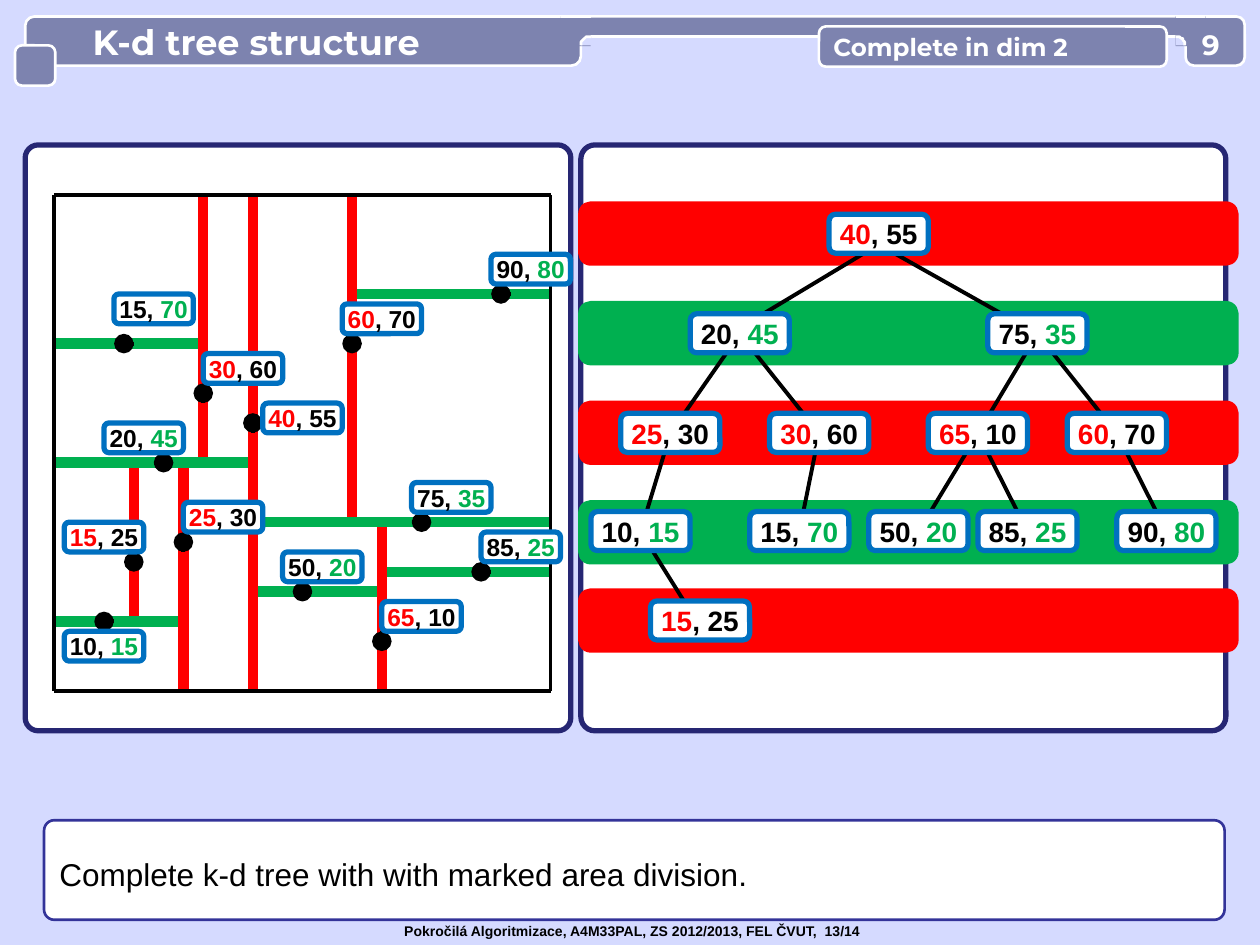
from dataclasses import dataclass
from math import cos, pi, sin
from typing import NamedTuple

from lxml.etree import SubElement
from pptx import Presentation
from pptx.dml.color import RGBColor
from pptx.enum.shapes import MSO_CONNECTOR, MSO_SHAPE
from pptx.enum.text import MSO_ANCHOR, PP_ALIGN
from pptx.oxml.ns import qn
from pptx.util import Pt

WHITE, BLACK, RED, GREEN = "FFFFFF", "000000", "FF0000", "00B050"
BACKGROUND, BAR, NAVY, LABEL_BLUE = "D5DAFF", "7D83AF", "262673", "0070C0"
GRID = 5.67
PLANE_LEFT, PLANE_TOP, PLANE_SIZE = 31.1, 111.3, 283.5
TREE_LEFT = 337.7
NODE_WIDTH, NODE_HEIGHT = 56.7, 22.3
TAG_WIDTH, TAG_HEIGHT = 45.4, 17


class Point(NamedTuple):
    x: float
    y: float


class Level(NamedTuple):
    band_top: float
    node_top: float
    joint: float


@dataclass
class Node:
    key: tuple[int, int]
    level: int
    column: int
    parent: int | None
    dot: Point
    stub: int
    tag: Point
    split: tuple[int, int]
    shift: float = 0

    @property
    def vertical(self) -> bool:
        return self.level % 2 == 0

    @property
    def color(self) -> str:
        return RED if self.vertical else GREEN

    @property
    def joint(self) -> Point:
        return Point(TREE_LEFT + self.column * GRID + NODE_WIDTH / 2, LEVELS[self.level].joint)


LEVELS = [
    Level(116.6, 122.4, 139.7),
    Level(173.5, 179.3, 190.8),
    Level(230.4, 236.2, 247.7),
    Level(287.3, 292.3, 303.8),
    Level(337.7, 343.4, 349.2),
]

NODES = [
    Node((40, 55), 0, 24, None, Point(40, 54), -2, Point(42, 58), (0, 100)),
    Node((20, 45), 1, 10, 0, Point(22, 46), -2, Point(10, 54), (0, 40), -GRID),
    Node((75, 35), 1, 40, 0, Point(74, 34), -2, Point(72, 42), (40, 100)),
    Node((25, 30), 2, 3, 1, Point(26, 30), -2, Point(26, 38), (0, 46)),
    Node((30, 60), 2, 18, 1, Point(30, 60), -2, Point(30, 68), (46, 100)),
    Node((65, 10), 2, 34, 2, Point(66, 10), 2, Point(66, 18), (0, 34)),
    Node((60, 70), 2, 48, 2, Point(60, 70), -2, Point(58, 78), (34, 100)),
    Node((10, 15), 3, 0, 3, Point(10, 14), 2, Point(2, 12), (0, 26)),
    Node((15, 70), 3, 16, 4, Point(14, 70), 2, Point(12, 80), (0, 30)),
    Node((50, 20), 3, 28, 5, Point(50, 20), 2, Point(46, 28), (40, 66)),
    Node((85, 25), 3, 39, 5, Point(86, 24), 2, Point(86, 32), (66, 100)),
    Node((90, 80), 3, 53, 6, Point(90, 80), 2, Point(88, 88), (60, 100)),
    Node((15, 25), 4, 6, 7, Point(16, 26), 2, Point(2, 34), (14, 46), -GRID),
]

presentation = Presentation()
presentation.slide_width, presentation.slide_height = Pt(720), Pt(540)
slide = presentation.slides.add_slide(presentation.slide_layouts[6])


def paint(target, color: str) -> None:
    target.solid()
    target.fore_color.rgb = RGBColor.from_string(color)


def on_plane(x: float, y: float) -> Point:
    scale = PLANE_SIZE / 100
    return Point(PLANE_LEFT + x * scale, PLANE_TOP + PLANE_SIZE - y * scale)


def add_box(left: float, top: float, width: float, height: float, fill: str, border: str | None = None,
            line_width: float = 3, rounding: float = 0.167, kind=MSO_SHAPE.ROUNDED_RECTANGLE):
    shape = slide.shapes.add_shape(kind, Pt(left), Pt(top), Pt(width), Pt(height))
    shape.shadow.inherit = False
    paint(shape.fill, fill)
    if border:
        paint(shape.line.fill, border)
        shape.line.width = Pt(line_width)
    else:
        shape.line.fill.background()
    if kind == MSO_SHAPE.ROUNDED_RECTANGLE:
        shape.adjustments[0] = rounding
    return shape


def add_line(start: Point, end: Point, color: str = BLACK, width: float = 2.25, dot: bool = False) -> None:
    connector = slide.shapes.add_connector(
        MSO_CONNECTOR.STRAIGHT, Pt(start.x), Pt(start.y), Pt(end.x), Pt(end.y))
    paint(connector.line.fill, color)
    connector.line.width = Pt(width)
    properties = connector._element.spPr
    if dot:
        SubElement(properties.find(qn("a:ln")), qn("a:tailEnd"), type="oval", w="lg", len="lg")
    SubElement(properties, qn("a:effectLst"))


def format_run(run, size: float, color: str, font: str = "Arial", bold: bool = True) -> None:
    run.font.name, run.font.size, run.font.bold = font, Pt(size), bold
    run.font.color.rgb = RGBColor.from_string(color)


def write(shape, text: str, size: float, color: str, font: str = "Arial", bold: bool = True,
          align=PP_ALIGN.LEFT, anchor=MSO_ANCHOR.MIDDLE, wrap: bool = True):
    frame = shape.text_frame
    frame.text = text
    frame.word_wrap, frame.vertical_anchor = wrap, anchor
    paragraph = frame.paragraphs[0]
    paragraph.alignment = align
    format_run(paragraph.runs[0], size, color, font, bold)
    return frame


def clear_margins(frame) -> None:
    frame.margin_left = frame.margin_right = frame.margin_top = frame.margin_bottom = 0


def add_key(node: Node, left: float, top: float, width: float, height: float, size: float) -> None:
    shape = add_box(left, top, width, height, WHITE, LABEL_BLUE)
    first_color, second_color = (node.color, BLACK) if node.vertical else (BLACK, node.color)
    first, second = node.key
    parts = (str(first), f", {second}") if node.vertical else (f"{first}, ", str(second))
    frame = write(shape, parts[0], size, first_color, align=PP_ALIGN.CENTER)
    clear_margins(frame)
    run = frame.paragraphs[0].add_run()
    run.text = parts[1]
    format_run(run, size, second_color)


def add_header_corner(center: Point, side: int) -> None:
    radius, block = 5.6, 17
    left = center.x - block if side < 0 else center.x
    add_box(left, 9.4, block, block, BAR, kind=MSO_SHAPE.RECTANGLE)
    add_line(Point(left, 9.4), Point(left + block, 9.4), WHITE, 1.5)
    angles = [step * pi / 16 for step in range(9)]
    arc = [(center.x + side * radius * sin(angle), center.y - radius * cos(angle)) for angle in angles]
    for points, closed in ((arc + [tuple(center)], True), (arc, False)):
        builder = slide.shapes.build_freeform(*points[0], scale=float(Pt(1)))
        builder.add_line_segments(points[1:], close=closed)
        shape = builder.convert_to_shape()
        shape.shadow.inherit = False
        if closed:
            paint(shape.fill, BACKGROUND)
            shape.line.fill.background()
        else:
            shape.fill.background()
            paint(shape.line.fill, WHITE)
            shape.line.width = Pt(1.5)


def draw_plane() -> None:
    for node in sorted(NODES, key=lambda item: -item.level):
        ends = [on_plane(node.dot.x, v) if node.vertical else on_plane(v, node.dot.y) for v in node.split]
        add_line(*ends, node.color, 6)
    for node in NODES:
        x, y = node.dot
        start = on_plane(x, y + node.stub) if node.vertical else on_plane(x + node.stub, y)
        add_line(start, on_plane(x, y), dot=True)
    corners = [on_plane(*corner) for corner in ((0, 0), (0, 100), (100, 100), (100, 0))]
    for start, end in zip(corners, corners[1:] + corners[:1]):
        add_line(start, end)
    for node in NODES:
        add_key(node, *on_plane(*node.tag), TAG_WIDTH, TAG_HEIGHT, 14)


def draw_tree() -> None:
    for node in NODES:
        if node.parent is not None:
            add_line(NODES[node.parent].joint, Point(node.joint.x + node.shift, node.joint.y))
    for node in NODES:
        add_key(node, TREE_LEFT + node.column * GRID, LEVELS[node.level].node_top, NODE_WIDTH, NODE_HEIGHT, 16)


def draw_header() -> None:
    title = add_box(14.4, 9.4, 317.5, 28.1, BAR, WHITE, 1.5, 0.188)
    write(title, "K-d tree structure", 20, WHITE, "Montserrat").margin_left = Pt(37)
    add_box(331.9, 9.4, 351.4, 11.5, BAR, WHITE, 1.5, 0.5)
    add_header_corner(Point(337.5, 26.2), -1)
    add_box(8.6, 25.9, 23, 23, BAR, WHITE, 1.5, 0.17)
    add_box(677.5, 9.4, 33.8, 28.1, BAR, WHITE, 1.5, 0.17)
    add_header_corner(Point(671.8, 26.2), 1)
    subtitle = add_box(468, 15.1, 198.7, 23, BAR, WHITE, 1.5, 0.17)
    write(subtitle, "Complete in dim 2", 14, WHITE, "Montserrat")
    number = slide.shapes.add_textbox(Pt(677.5), Pt(15.8), Pt(28.8), Pt(19.4))
    clear_margins(write(number, "9", 16, WHITE, "Montserrat", align=PP_ALIGN.CENTER))


def draw_footer() -> None:
    caption = add_box(25.2, 468.7, 674.6, 56.9, WHITE, "333399", 1.5, 0.103)
    frame = write(caption, "Complete k-d tree with with marked area division.", 18, BLACK, bold=False)
    frame.paragraphs[0].line_spacing = 1.2
    credit = slide.shapes.add_textbox(Pt(223.9), Pt(523.4), Pt(280.8), Pt(17.3))
    write(credit, "Pokročilá Algoritmizace, A4M33PAL, ZS 2012/2013, FEL ČVUT,  13/14", 8, BLACK,
          anchor=MSO_ANCHOR.TOP, wrap=False)


paint(slide.background.fill, BACKGROUND)
for panel_left, panel_width in ((331.9, 368.6), (14.4, 311.8)):
    add_box(panel_left, 82.8, panel_width, 334.8, WHITE, NAVY, rounding=0.024)
for index, level in enumerate(LEVELS):
    band_color = GREEN if index % 2 else RED
    add_box(331.9, level.band_top, 374.4, 33.8, band_color, band_color)
draw_plane()
draw_tree()
draw_header()
draw_footer()
presentation.save("out.pptx")
